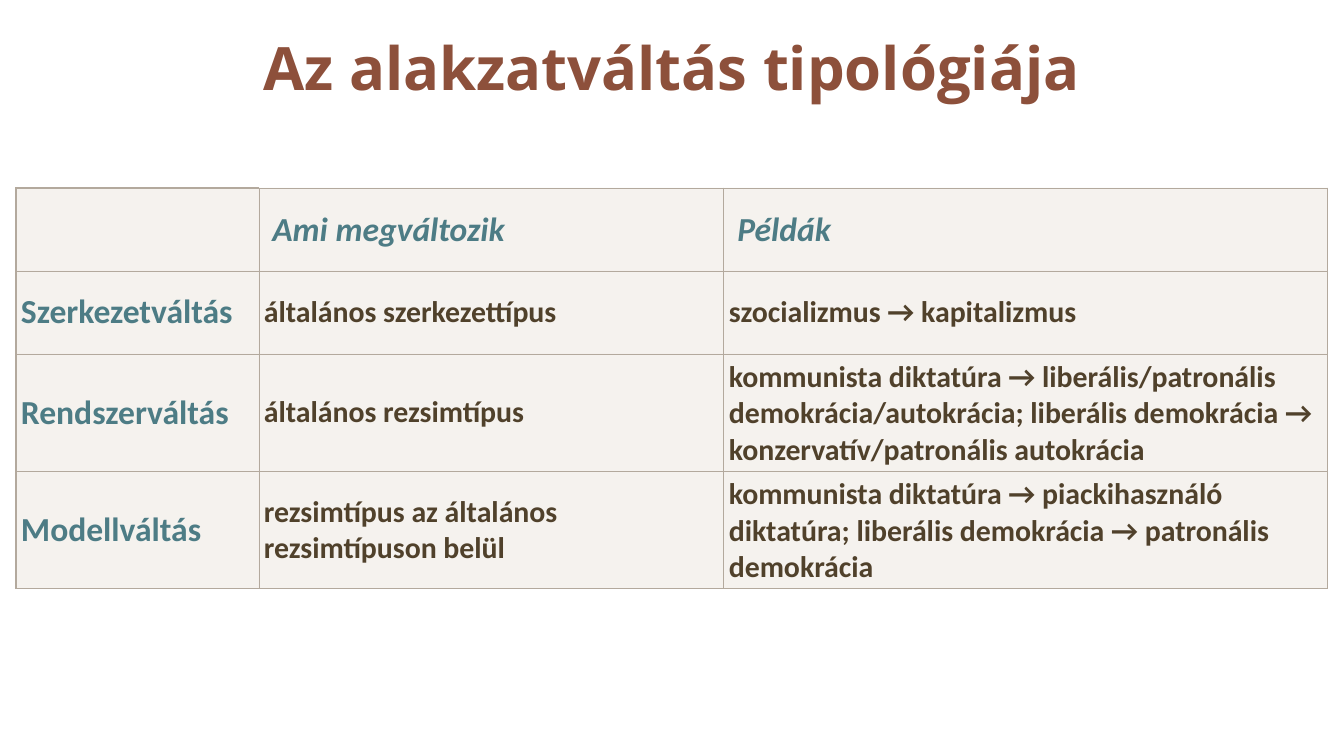
"""Build a slide with a titled table on the types of formation change."""
from lxml import etree
from pptx import Presentation
from pptx.dml.color import RGBColor
from pptx.enum.text import MSO_ANCHOR, PP_ALIGN
from pptx.oxml.ns import qn
from pptx.util import Pt

MIDDLE = MSO_ANCHOR.MIDDLE
CENTER = PP_ALIGN.CENTER
PX = 914400 / 134.4

COLORS = {"title": "8D503B", "head": "4D7C85", "body": "50412B",
          "fill": "EFEAE4", "edge": "B3A99D"}
TITLE = "Az alakzatváltás tipológiája"
ROWS = [
    ("", "Ami megváltozik", "Példák"),
    ("Szerkezetváltás", "általános szerkezettípus",
     "szocializmus → kapitalizmus"),
    ("Rendszerváltás", "általános rezsimtípus",
     "kommunista diktatúra → liberális/patronális demokrácia/autokrácia; "
     "liberális demokrácia → konzervatív/patronális autokrácia"),
    ("Modellváltás", "rezsimtípus az általános rezsimtípuson belül",
     "kommunista diktatúra → piackihasználó diktatúra; "
     "liberális demokrácia → patronális demokrácia"),
]
WIDTHS = [243, 465, 604]
LEFT, TOP, HIGH, PAD = 16, 188, 83, 5
FORMATS = {
    "title": {"name": "Open Sans", "size": Pt(32), "bold": True},
    "top": {"name": "Calibri", "size": Pt(18), "bold": True, "italic": True},
    "side": {"name": "Calibri", "size": Pt(18), "bold": True, "italic": False},
    "body": {"name": "Calibri", "size": Pt(16), "bold": True, "italic": False},
}
SIDES = ("margin_left", "margin_right", "margin_top", "margin_bottom")


def px(n):
    return round(n * PX)


def write(frame, text, kind, color):
    para = frame.paragraphs[0]
    run = para.add_run()
    run.text = text
    for key, value in FORMATS[kind].items():
        setattr(run.font, key, value)
    run.font.color.rgb = RGBColor.from_string(COLORS[color])
    return para


def paint(cell, row, col):
    cell.fill.solid()
    cell.fill.fore_color.rgb = RGBColor.from_string(COLORS["fill"])
    props = cell._tc.get_or_add_tcPr()
    tint = props.find(".//" + qn("a:srgbClr"))
    etree.SubElement(tint, qn("a:alpha"), val="60000")
    for i, side in enumerate("LRTB"):
        thick = (side == "L" and col == 0) or (side == "T" and row == col == 0)
        line = etree.Element(qn("a:ln" + side), w=str(Pt(1 if thick else 0.5)))
        solid = etree.SubElement(line, qn("a:solidFill"))
        etree.SubElement(solid, qn("a:srgbClr"), val=COLORS["edge"])
        props.insert(i, line)


def main():
    deck = Presentation()
    deck.slide_width, deck.slide_height = px(1344), px(756)
    slide = deck.slides.add_slide(deck.slide_layouts[6])

    box = slide.shapes.add_textbox(px(LEFT), 0, px(sum(WIDTHS)), px(134))
    frame = box.text_frame
    frame.word_wrap = True
    frame.vertical_anchor = MIDDLE
    write(frame, TITLE, "title", "title").alignment = CENTER

    table = slide.shapes.add_table(
        len(ROWS), len(WIDTHS), px(LEFT), px(TOP),
        px(sum(WIDTHS)), px(HIGH * len(ROWS))).table
    table.first_row = table.horz_banding = False
    for col, width in zip(table.columns, WIDTHS):
        col.width = px(width)
    for r, texts in enumerate(ROWS):
        table.rows[r].height = px(HIGH)
        for c, text in enumerate(texts):
            cell = table.cell(r, c)
            cell.vertical_anchor = MIDDLE
            paint(cell, r, c)
            if r:
                for side in SIDES:
                    setattr(cell, side, px(PAD))
            kind = "top" if r == 0 else "side" if c == 0 else "body"
            if text:
                write(cell.text_frame, text, kind,
                      "body" if kind == "body" else "head")
    deck.save("out.pptx")


if __name__ == "__main__":
    main()
